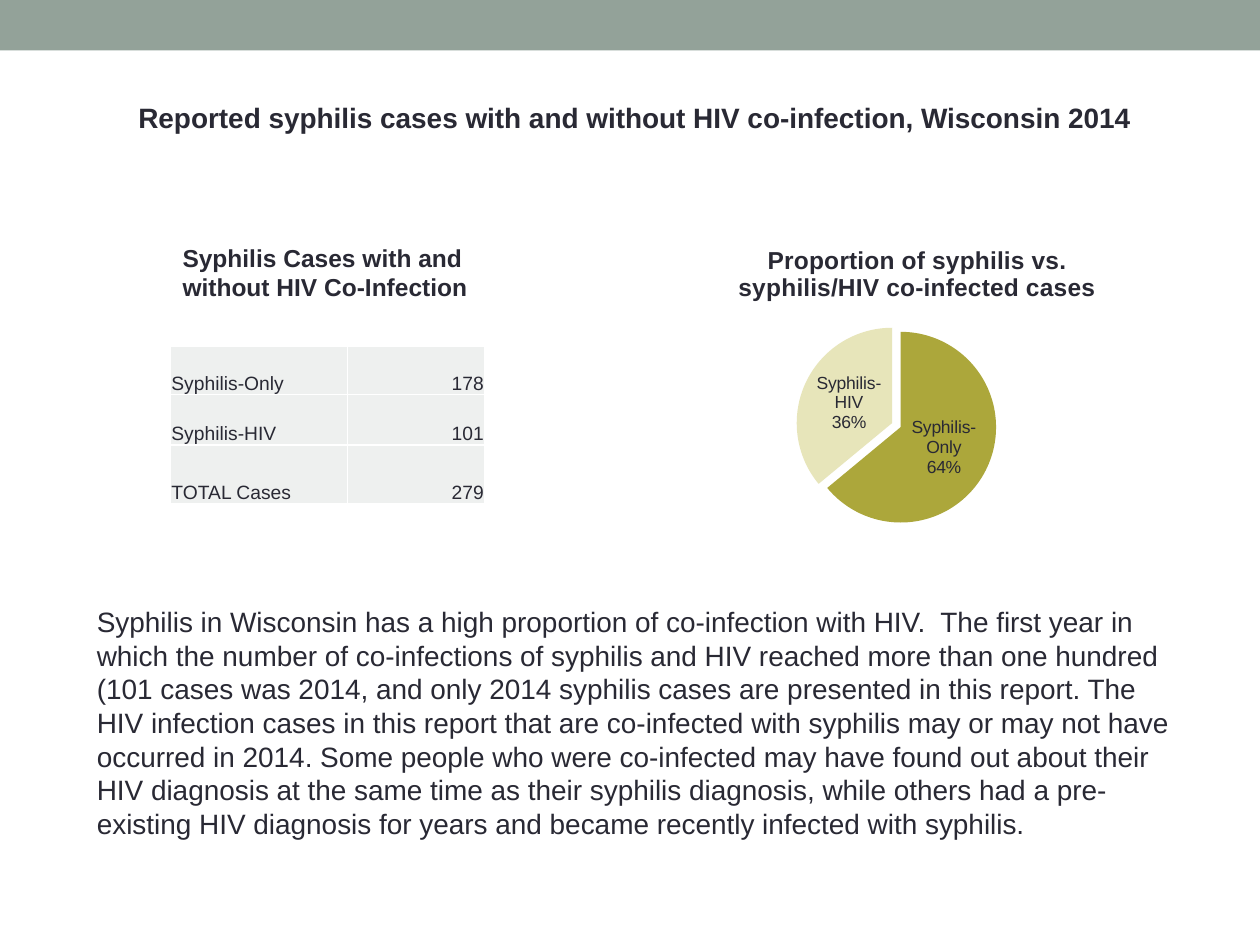
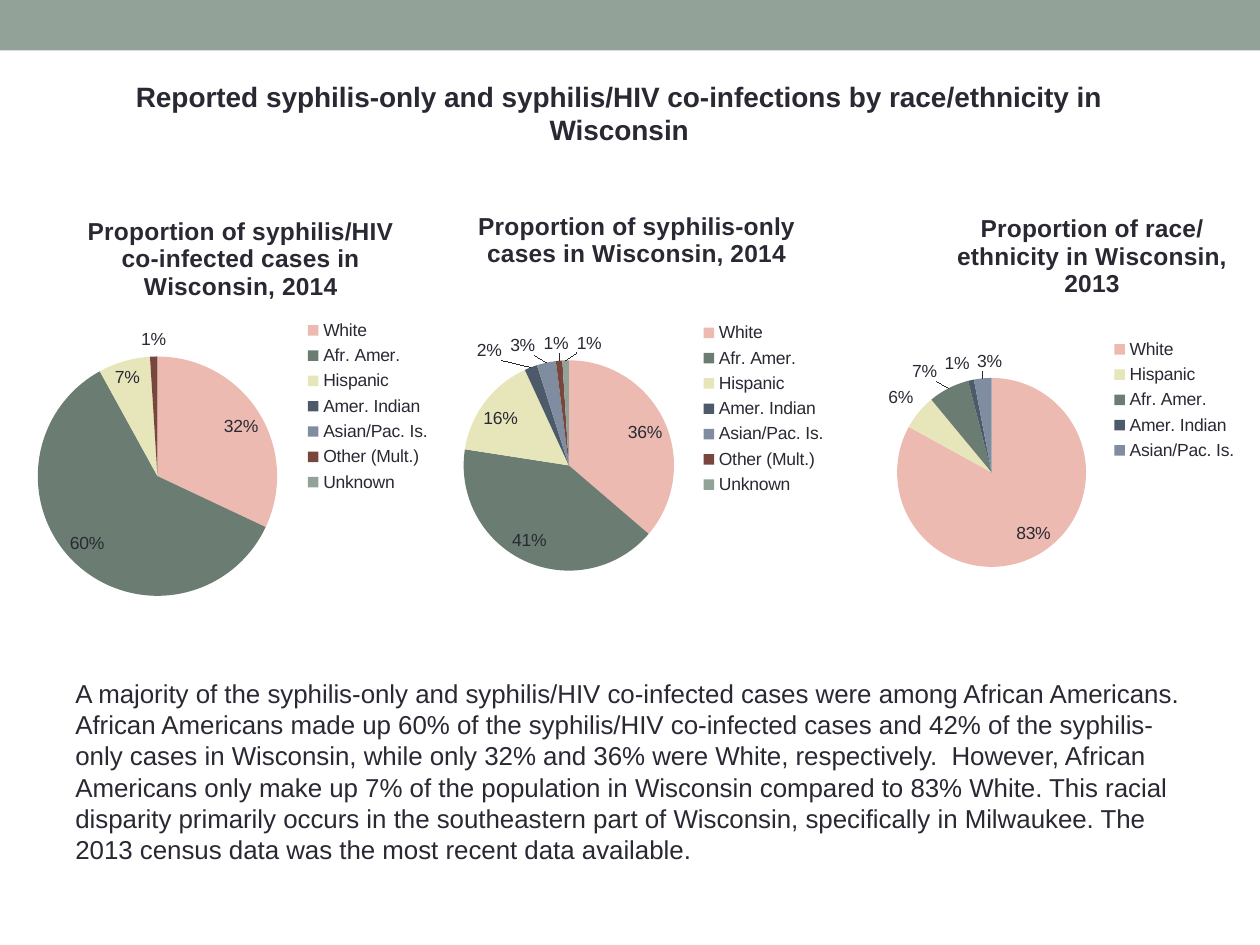
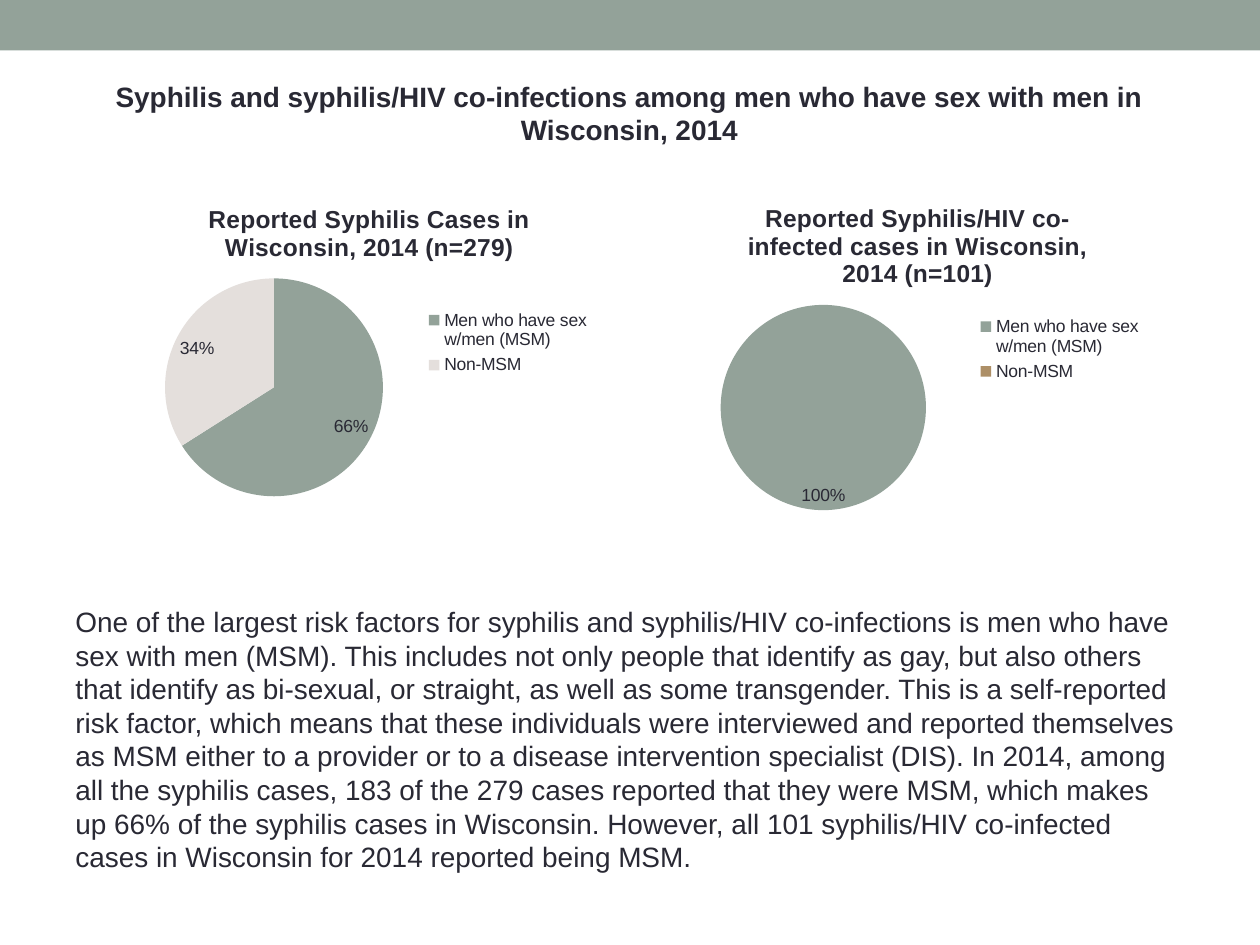
from lxml import etree
from pptx import Presentation
from pptx.chart.data import CategoryChartData
from pptx.dml.color import RGBColor
from pptx.enum import chart as ch, shapes, text
from pptx.oxml import parse_xml
from pptx.oxml.ns import nsdecls, qn
from pptx.util import Inches, Pt

FONT = "Arial"
COLORS = {
    "ink": "292934", "sage": "93A299", "cell": "EEF0EF", "white": "FFFFFF",
    "olive": "ACA73B", "cream": "E7E5BA", "pink": "EDBAB1", "green": "6B7D72",
    "slate": "4C5A6A", "steel": "808DA0", "brown": "79463D",
    "stone": "E4DFDC", "tan": "AD8F67",
}
RACE_COLORS = {
    "White": "pink", "Afr. Amer.": "green", "Hispanic": "cream",
    "Amer. Indian": "slate", "Asian/Pac. Is.": "steel",
    "Other (Mult.)": "brown", "Unknown": "sage",
}
MSM = "Men who have sex w/men (MSM)"


def rgb(name):
    return RGBColor.from_string(COLORS[name])


def inches(box):
    return [Inches(v) for v in box]


def style(font, size, bold=False):
    font.name, font.size, font.bold = FONT, Pt(size), bold
    font.color.rgb = rgb("ink")


def add_slide(prs):
    """Blank slide with the band along its top edge."""
    s = prs.slides.add_slide(prs.slide_layouts[6])
    band = s.shapes.add_shape(shapes.MSO_SHAPE.RECTANGLE, 0, 0, prs.slide_width, Inches(0.4))
    band.shadow.inherit = False
    band.fill.solid()
    band.fill.fore_color.rgb = rgb("sage")
    band.line.fill.background()
    return s


def add_text(s, box, content, size=16, bold=False, align=text.PP_ALIGN.LEFT):
    tf = s.shapes.add_textbox(*inches(box)).text_frame
    tf.word_wrap = True
    p = tf.paragraphs[0]
    p.text = content
    p.alignment = align
    p.line_spacing = Pt(size * 1.2)
    style(p.runs[0].font, size, bold)


def add_heading(s, box, content):
    add_text(s, box, content, bold=True, align=text.PP_ALIGN.CENTER)


def add_borders(cell):
    tc_pr = cell._tc.get_or_add_tcPr()
    for i, side in enumerate(("lnL", "lnR", "lnT", "lnB")):
        tc_pr.insert(i, parse_xml(
            f'<a:{side} {nsdecls("a")} w="12700"><a:solidFill>'
            f'<a:srgbClr val="{COLORS["white"]}"/></a:solidFill></a:{side}>'))


def add_case_table(s, box, rows, widths, heights):
    table = s.shapes.add_table(len(rows), len(widths), *inches(box)).table
    table.first_row = table.horz_banding = False
    for column, width in zip(table.columns, widths):
        column.width = Inches(width)
    for row, height, values in zip(table.rows, heights, rows):
        row.height = Inches(height)
        for i, (cell, value) in enumerate(zip(row.cells, values)):
            cell.text = value
            cell.vertical_anchor = text.MSO_ANCHOR.BOTTOM
            cell.margin_left = cell.margin_right = cell.margin_top = Inches(0.01)
            cell.margin_bottom = 0
            cell.fill.solid()
            cell.fill.fore_color.rgb = rgb("cell")
            p = cell.text_frame.paragraphs[0]
            p.alignment = text.PP_ALIGN.RIGHT if i else text.PP_ALIGN.LEFT
            style(p.runs[0].font, 11)
            add_borders(cell)


def place(el, index, part, box, inner=False):
    """Fix a chart part at inches measured from the chart's own corner."""
    for old in el.findall(qn("c:layout")):
        el.remove(old)
    layout = etree.Element(qn("c:layout"))
    manual = etree.SubElement(layout, qn("c:manualLayout"))
    settings = [("layoutTarget", "inner")] if inner else []
    settings += [("xMode", "edge"), ("yMode", "edge")]
    sizes = (box[2], box[3]) * 2
    settings += [(k, f"{v / size:.4f}") for k, v, size in zip("xywh", part, sizes)]
    for key, value in settings:
        etree.SubElement(manual, qn(f"c:{key}")).set("val", value)
    el.insert(index, layout)


def hide_zero_labels(labels, values):
    for i in reversed([i for i, v in enumerate(values) if v == 0]):
        labels._element.insert(0, parse_xml(
            f'<c:dLbl {nsdecls("c")}><c:idx val="{i}"/><c:delete val="1"/></c:dLbl>'))


def add_pie(s, box, title, title_at, pie, values, colors, legend=None):
    """Pie chart; title_at, pie (x, y, diameter) and legend are relative to box."""
    data = CategoryChartData()
    data.categories = list(values)
    data.add_series("Series 1", values.values())
    chart = s.shapes.add_chart(ch.XL_CHART_TYPE.PIE, *inches(box), data).chart
    style(chart.font, 10)

    chart.chart_title.text_frame.text = title
    for p in chart.chart_title.text_frame.paragraphs:
        style(p.runs[0].font, 14, True)
    place(chart.chart_title._element, 1, title_at, box)
    x, y, d = pie
    place(chart._chartSpace.chart.plotArea, 0, (x, y, d, d), box, inner=True)

    chart.has_legend = legend is not None
    if legend:
        chart.legend.position = ch.XL_LEGEND_POSITION.RIGHT
        chart.legend.include_in_layout = False
        style(chart.legend.font, 10)
        place(chart.legend._element, 1, legend, box)

    plot = chart.plots[0]
    plot.vary_by_categories = True
    series = plot.series[0]
    for i, name in enumerate(colors):
        fill = series.points[i].format.fill
        fill.solid()
        fill.fore_color.rgb = rgb(name)
    labels = series.data_labels
    labels.show_percentage, labels.show_value = True, False
    labels.number_format, labels.number_format_is_linked = "0%", False
    labels.position = ch.XL_LABEL_POSITION.BEST_FIT
    style(labels.font, 10)
    hide_zero_labels(labels, values.values())
    return series


def explode(series, percent):
    first_point = series._element.find(qn("c:dPt"))
    first_point.addprevious(parse_xml(f'<c:explosion {nsdecls("c")} val="{percent}"/>'))


def label_with_names(series):
    """Centred labels with the category, the first one worded by hand."""
    labels = series.data_labels
    labels.show_category_name = True
    labels.position = ch.XL_LABEL_POSITION.CENTER
    label = series.points[0].data_label
    label.text_frame.text = "Syphilis- Only\n64%"
    for p in label.text_frame.paragraphs:
        style(p.runs[0].font, 10)
    label.position = ch.XL_LABEL_POSITION.CENTER


def build_overview(prs):
    s = add_slide(prs)
    add_case_table(s, (1.35, 2.75, 2.5, 1.25),
                   [("Syphilis-Only", "178"), ("Syphilis-HIV", "101"), ("TOTAL Cases", "279")],
                   (1.41, 1.09), (0.38, 0.4, 0.47))
    series = add_pie(s, (5.17, 1.57, 3.8, 2.95),
                     "Proportion of syphilis vs.\nsyphilis/HIV co-infected cases",
                     (0.66, 0.34), (1.15, 1.01, 1.59),
                     {"Syphilis Only": 64, "Syphilis-HIV": 36}, ("olive", "cream"))
    explode(series, 5)
    label_with_names(series)
    add_text(s, (1.35, 1.88, 2.92, 0.57),
             "Syphilis Cases with and without HIV Co-Infection", 14, True)
    add_text(s, (0.67, 4.75, 8.75, 1.99),
             "Syphilis in Wisconsin has a high proportion of co-infection with HIV.  The first year "
             "in which the number of co-infections of syphilis and HIV reached more than one hundred "
             "(101 cases was 2014, and only 2014 syphilis cases are presented in this report. The HIV "
             "infection cases in this report that are co-infected with syphilis may or may not have "
             "occurred in 2014. Some people who were co-infected may have found out about their HIV "
             "diagnosis at the same time as their syphilis diagnosis, while others had a pre-existing "
             "HIV diagnosis for years and became recently infected with syphilis.")
    add_text(s, (1, 0.75, 8.17, 0.37),
             "Reported syphilis cases with and without HIV co-infection, Wisconsin 2014", bold=True)


def add_race_pie(s, box, title, title_at, pie, values, legend):
    add_pie(s, box, title, title_at, pie, values, [RACE_COLORS[k] for k in values], legend)


def build_race(prs):
    s = add_slide(prs)
    add_heading(s, (0.58, 0.58, 8.67, 0.64),
                "Reported syphilis-only and syphilis/HIV co-infections by race/ethnicity in Wisconsin")
    add_race_pie(s, (0.17, 1.5, 3.42, 3.46),
                 "Proportion of syphilis/HIV co-infected cases in Wisconsin, 2014",
                 (0.49, 0.17), (0.13, 1.33, 1.9),
                 dict(zip(RACE_COLORS, (32, 60, 7, 0, 0, 1, 0))), (2.15, 1, 1.2, 1.45))
    add_race_pie(s, (6.83, 1.5, 3.08, 3.42),
                 "Proportion of race/ethnicity in Wisconsin, 2013",
                 (0.73, 0.15), (0.29, 1.5, 1.5),
                 {"White": 83, "Hispanic": 6, "Afr. Amer.": 7, "Amer. Indian": 1,
                  "Asian/Pac. Is.": 3}, (1.9, 1.15, 1.18, 1.05))
    add_race_pie(s, (3.33, 1.5, 3.4, 3.51),
                 "Proportion of syphilis-only cases in Wisconsin, 2014",
                 (0.43, 0.13), (0.35, 1.36, 1.67),
                 dict(zip(RACE_COLORS, (37, 42, 16, 2, 3, 1, 1))), (2.13, 1.02, 1.2, 1.45))
    add_text(s, (0.5, 5.33, 9, 1.75),
             "A majority of the syphilis-only and syphilis/HIV co-infected cases were among African "
             "Americans. African Americans made up 60% of the syphilis/HIV co-infected cases and 42% "
             "of the syphilis-only cases in Wisconsin, while only 32% and 36% were White, "
             "respectively.  However, African Americans only make up 7% of the population in "
             "Wisconsin compared to 83% White. This racial disparity primarily occurs in the "
             "southeastern part of Wisconsin, specifically in Milwaukee. The 2013 census data was "
             "the most recent data available.", 14.8)


def build_msm(prs):
    s = add_slide(prs)
    add_heading(s, (0.58, 0.58, 8.83, 0.64),
                "Syphilis and syphilis/HIV co-infections among men who have sex with men in "
                "Wisconsin, 2014")
    add_pie(s, (1, 1.42, 3.78, 2.67), "Reported Syphilis Cases in Wisconsin, 2014 (n=279)",
            (0.62, 0.16), (0.31, 0.79, 1.73), {MSM: 66, "Non-MSM": 34},
            ("sage", "stone"), (2.33, 1, 1.4, 0.6))
    add_pie(s, (5.33, 1.42, 3.83, 2.77),
            "Reported Syphilis/HIV co-infected cases in Wisconsin, 2014 (n=101)",
            (0.57, 0.15), (0.39, 1, 1.63), {MSM: 100, "Non-MSM": 0},
            ("sage", "tan"), (2.38, 1.05, 1.4, 0.6))
    add_text(s, (0.5, 4.75, 9, 2.33),
             "One of the largest risk factors for syphilis and syphilis/HIV co-infections is men who "
             "have sex with men (MSM). This includes not only people that identify as gay, but also "
             "others that identify as bi-sexual, or straight, as well as some transgender. This is a "
             "self-reported risk factor, which means that these individuals were interviewed and "
             "reported themselves as MSM either to a provider or to a disease intervention specialist "
             "(DIS). In 2014, among all the syphilis cases, 183 of the 279 cases reported that they "
             "were MSM, which makes up 66% of the syphilis cases in Wisconsin. However, all 101 "
             "syphilis/HIV co-infected cases in Wisconsin for 2014 reported being MSM.")


def main():
    prs = Presentation()
    prs.slide_width, prs.slide_height = Inches(10), Inches(7.5)
    build_overview(prs)
    build_race(prs)
    build_msm(prs)
    prs.save("out.pptx")


if __name__ == "__main__":
    main()
